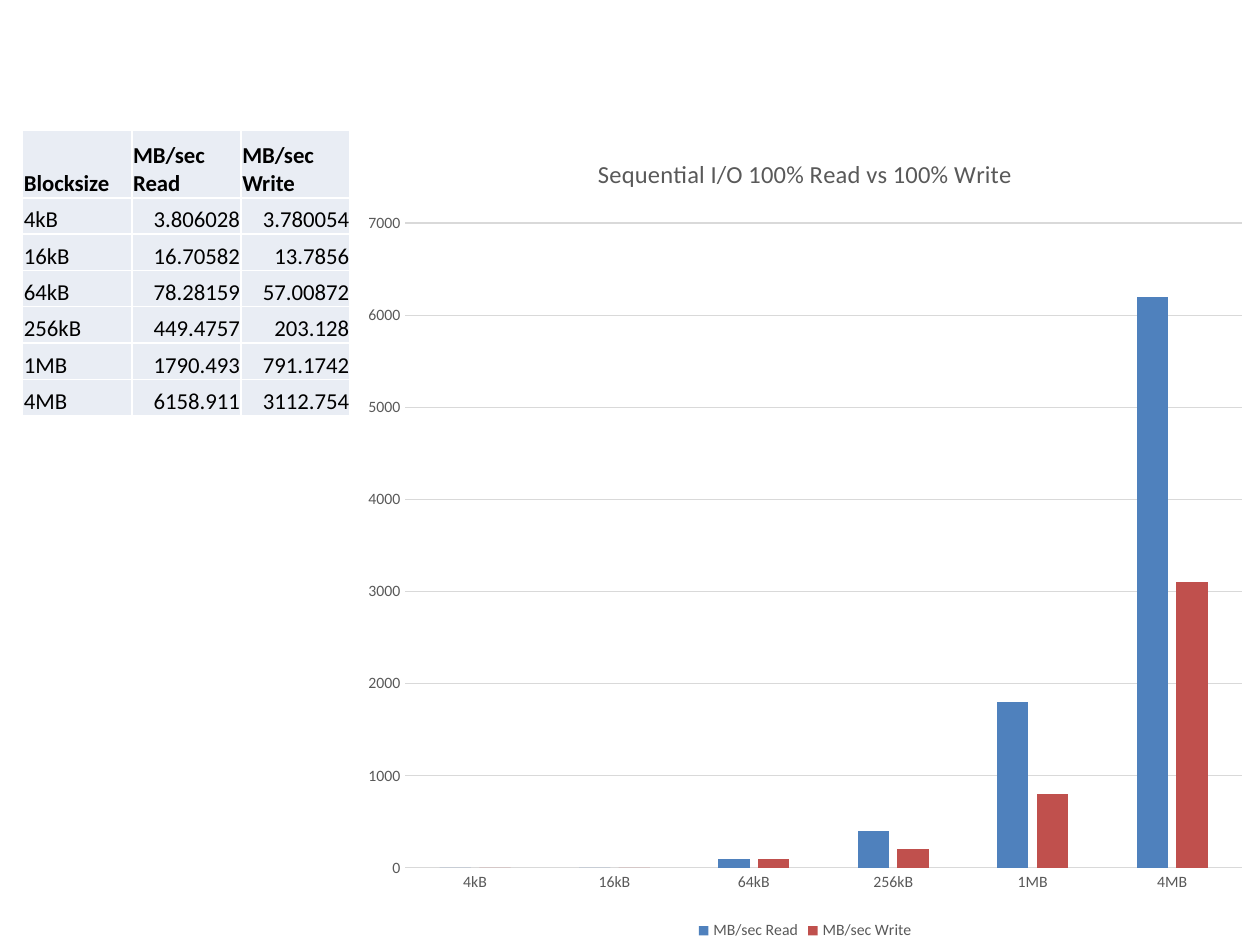
"""Build a slide with sequential read and write throughput as a table and a column chart."""
from lxml.etree import SubElement
from pptx import Presentation
from pptx.chart.data import CategoryChartData
from pptx.dml.color import RGBColor
from pptx.enum.chart import XL_CHART_TYPE as ChartType, XL_LEGEND_POSITION as LegendPosition, XL_TICK_MARK as TickMark
from pptx.enum.text import MSO_ANCHOR as Anchor, PP_ALIGN as Align
from pptx.oxml.ns import qn
from pptx.util import Inches, Pt

BLACK = RGBColor(0x00, 0x00, 0x00)
WHITE = RGBColor(0xFF, 0xFF, 0xFF)
PALE_BLUE = RGBColor(0xE9, 0xED, 0xF4)
GREY = RGBColor(0x59, 0x59, 0x59)
LIGHT_GREY = RGBColor(0xD9, 0xD9, 0xD9)
BLUE = RGBColor(0x4F, 0x81, 0xBD)
RED = RGBColor(0xC0, 0x50, 0x4D)
FONT = "Calibri"

HEADER = ("Blocksize", "MB/sec Read", "MB/sec Write")
RESULTS = (
    ("4kB", 3.806028, 3.780054),
    ("16kB", 16.70582, 13.7856),
    ("64kB", 78.28159, 57.00872),
    ("256kB", 449.4757, 203.128),
    ("1MB", 1790.493, 791.1742),
    ("4MB", 6158.911, 3112.754),
)


def set_font(font, size, color, bold=False):
    font.name = FONT
    font.size = Pt(size)
    font.bold = bold
    font.color.rgb = color


def add_borders(cell):
    properties = cell._tc.get_or_add_tcPr()
    for position, side in enumerate(("lnL", "lnR", "lnT", "lnB")):
        line = SubElement(properties, qn(f"a:{side}"), w=str(Pt(1)))
        fill = SubElement(line, qn("a:solidFill"))
        SubElement(fill, qn("a:srgbClr"), val=str(WHITE))
        properties.insert(position, line)


presentation = Presentation()
presentation.slide_width = Inches(10)
presentation.slide_height = Inches(7.5)
slide = presentation.slides.add_slide(presentation.slide_layouts[6])

top = Inches(1.03)
table_left = Inches(0.18)
table_width, table_height = Inches(2.6), Inches(2.27)
column_width = table_width // len(HEADER)
header_height = Inches(0.54)
row_height = (table_height - header_height) // len(RESULTS)

throughput = slide.shapes.add_table(
    len(RESULTS) + 1, len(HEADER), table_left, top, table_width, table_height
).table
for column in throughput.columns:
    column.width = column_width
for row_index, values in enumerate((HEADER, *RESULTS)):
    throughput.rows[row_index].height = row_height if row_index else header_height
    for column_index, value in enumerate(values):
        cell = throughput.cell(row_index, column_index)
        cell.fill.solid()
        cell.fill.fore_color.rgb = PALE_BLUE
        add_borders(cell)
        cell.vertical_anchor = Anchor.BOTTOM
        cell.margin_left = cell.margin_right = cell.margin_top = Inches(0.01)
        cell.margin_bottom = 0
        cell.text_frame.text = str(value)
        paragraph = cell.text_frame.paragraphs[0]
        paragraph.alignment = Align.RIGHT if row_index and column_index else Align.LEFT
        set_font(paragraph.runs[0].font, 13, BLACK, bold=row_index == 0)

block_sizes, reads, writes = zip(*RESULTS)
chart_data = CategoryChartData(number_format="General")
chart_data.categories = block_sizes
for name, speeds in zip(HEADER[1:], (reads, writes)):
    chart_data.add_series(name, [round(speed, -2) for speed in speeds])
chart_left = table_left + table_width
chart = slide.shapes.add_chart(
    ChartType.COLUMN_CLUSTERED, chart_left, top,
    presentation.slide_width - chart_left, presentation.slide_height - top, chart_data,
).chart
set_font(chart.font, 10, BLACK)

chart.has_title = True
chart.chart_title.text_frame.text = "Sequential I/O 100% Read vs 100% Write"
set_font(chart.chart_title.text_frame.paragraphs[0].runs[0].font, 14, GREY)
chart.chart_title.include_in_layout = False

chart.has_legend = True
chart.legend.position = LegendPosition.BOTTOM
chart.legend.include_in_layout = False
set_font(chart.legend.font, 9, GREY)

columns = chart.plots[0]
columns.gap_width = 219
columns.overlap = -27
columns.vary_by_categories = False
for series, color in zip(columns.series, (BLUE, RED)):
    series.format.fill.solid()
    series.format.fill.fore_color.rgb = color

size_axis, speed_axis = chart.category_axis, chart.value_axis
for axis in (size_axis, speed_axis):
    axis.major_tick_mark = axis.minor_tick_mark = TickMark.NONE
    set_font(axis.tick_labels.font, 9, GREY)
speed_axis.minimum_scale = 0
speed_axis.maximum_scale = 7000
speed_axis.major_unit = 1000
speed_axis.has_major_gridlines = True
speed_axis.format.line.fill.background()
for line in (size_axis.format.line, speed_axis.major_gridlines.format.line):
    line.color.rgb = LIGHT_GREY
    line.width = Pt(0.75)

presentation.save("out.pptx")
